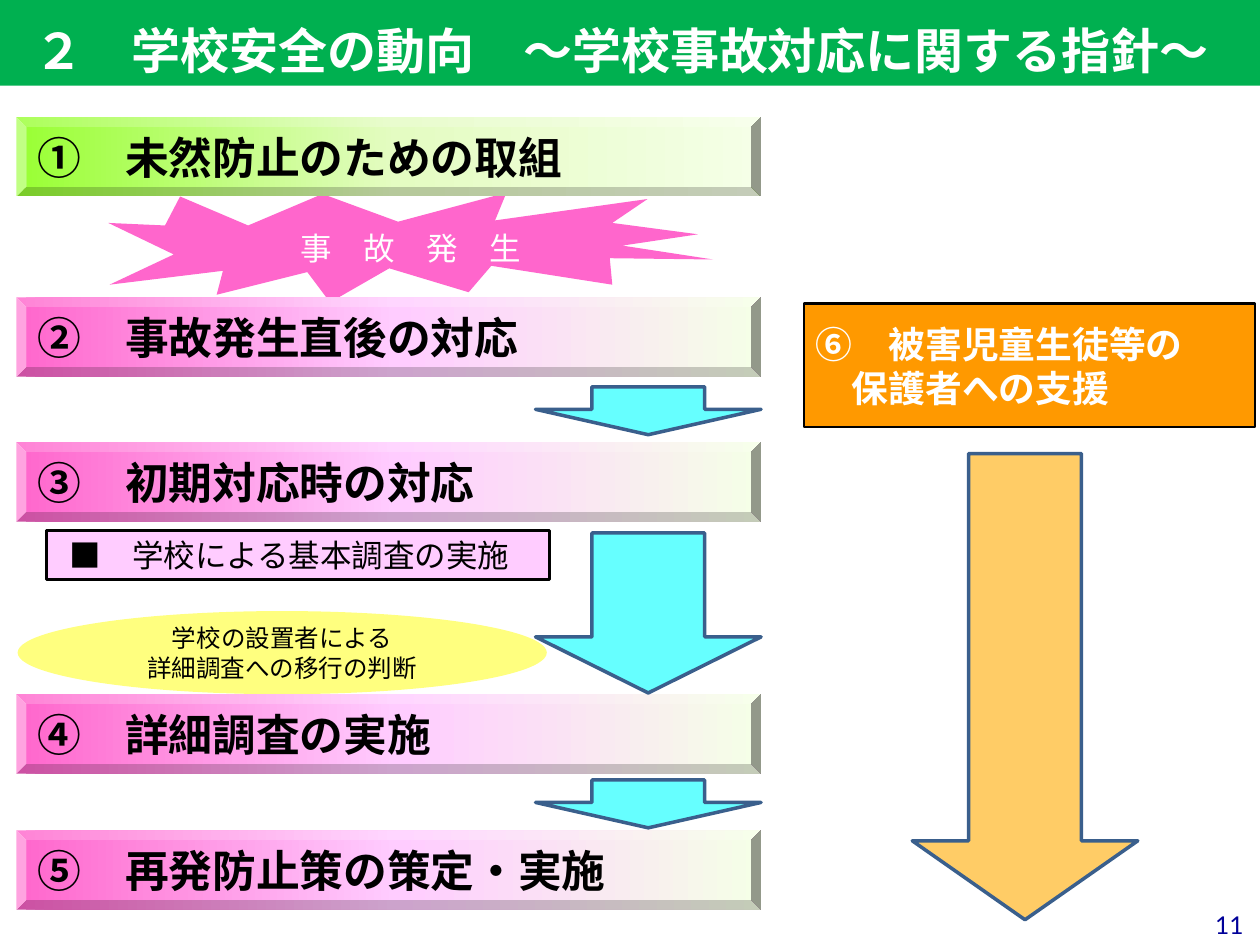
from copy import deepcopy
from lxml.etree import SubElement
from pptx import Presentation
from pptx.dml.color import RGBColor
from pptx.enum.shapes import MSO_SHAPE as SHAPE
from pptx.enum.text import MSO_ANCHOR as ANCHOR, PP_ALIGN as ALIGN
from pptx.oxml.ns import qn
from pptx.util import Inches, Pt

BLACK = RGBColor(0x00, 0x00, 0x00)
WHITE = RGBColor(0xFF, 0xFF, 0xFF)
GREEN = RGBColor(0x00, 0xB0, 0x50)
PINK = RGBColor(0xFF, 0x66, 0xCC)
PALE_PINK = RGBColor(0xFF, 0xCC, 0xFF)
LIME = RGBColor(0x99, 0xFF, 0x33)
PALE_LIME = RGBColor(0xE4, 0xFC, 0xC2)
CREAM = RGBColor(0xF5, 0xFF, 0xE7)
CYAN = RGBColor(0x66, 0xFF, 0xFF)
ORANGE = RGBColor(0xFF, 0x99, 0x00)
PALE_ORANGE = RGBColor(0xFF, 0xCC, 0x66)
YELLOW = RGBColor(0xFF, 0xFF, 0x00)
STEEL = RGBColor(0x3A, 0x5F, 0x8C)
NAVY = RGBColor(0x00, 0x00, 0x99)
CJK = "Noto Sans CJK JP"


def add_box(kind, x, y, w, h, fill=None, line=None, line_width=1.5):
    sp = s.shapes.add_shape(kind, Inches(x), Inches(y), Inches(w), Inches(h))
    sp.shadow.inherit = False
    if fill is not None:
        sp.fill.solid()
        sp.fill.fore_color.rgb = fill
    if line is None:
        sp.line.fill.background()
    else:
        sp.line.color.rgb = line
        sp.line.width = Pt(line_width)
    return sp


def write(sp, text, size, color, bold=False, align=ALIGN.LEFT, font=CJK, inset=0.04):
    """Fill the shape with one paragraph per line of text, centred vertically."""
    tf = sp.text_frame
    tf.word_wrap = True
    tf.vertical_anchor = ANCHOR.MIDDLE
    tf.margin_left = tf.margin_right = Inches(0.09)
    tf.margin_top = tf.margin_bottom = Inches(inset)
    tf.text = text
    for p in tf.paragraphs:
        p.alignment = align
        p.font.name = font
        p.font.size = Pt(size)
        p.font.bold = bold
        p.font.color.rgb = color
        props = p._p.get_or_add_pPr().get_or_add_defRPr()
        SubElement(props, qn("a:ea")).set("typeface", CJK)
    return tf


prs = Presentation()
prs.slide_width = Inches(10)
prs.slide_height = Inches(7.5)
s = prs.slides.add_slide(prs.slide_layouts[6])

# Accident burst
burst_points = [
    (3.16, 1.76), (4.02, 1.53), (3.93, 1.75), (5.14, 1.58), (4.86, 1.77),
    (5.54, 1.86), (4.94, 1.95), (5.66, 2.06), (4.84, 2.05), (4.86, 2.26),
    (3.9, 2.11), (3.72, 2.32), (3.09, 2.13), (2.62, 2.4), (2.44, 2.16),
    (1.72, 2.34), (1.77, 2.15), (0.87, 2.26), (1.38, 2.02), (0.86, 1.77),
    (1.31, 1.79), (1.43, 1.56), (1.97, 1.79), (2.56, 1.54),
]
points = [(Inches(x), Inches(y)) for x, y in burst_points]
builder = s.shapes.build_freeform(*points[0])
builder.add_line_segments(points[1:], close=True)
burst = builder.convert_to_shape()
burst.shadow.inherit = False
burst.fill.solid()
burst.fill.fore_color.rgb = PINK
burst.line.fill.background()
write(burst, "事　故　発　生", 18, WHITE, align=ALIGN.CENTER, inset=0.05)

# Decision to move on to the detailed survey
decision = add_box(SHAPE.OVAL, 0.14, 4.85, 4.2, 0.66, YELLOW)
yellow = decision.fill._xPr.find(qn("a:solidFill"))[0]
SubElement(yellow, qn("a:alpha")).set("val", "50000")
write(decision, "学校の設置者による\n詳細調査への移行の判断", 14, BLACK,
      align=ALIGN.CENTER, inset=0.05)

# Steps
steps = [
    (0.93, "①　未然防止のための取組", LIME, PALE_LIME),
    (2.36, "②　事故発生直後の対応", PINK, PALE_PINK),
    (3.51, "③　初期対応時の対応", PINK, PALE_PINK),
    (5.51, "④　詳細調査の実施", PINK, PALE_PINK),
    (6.59, "⑤　再発防止策の策定・実施", PINK, PALE_PINK),
]
for y, text, start, middle in steps:
    step = add_box(SHAPE.BEVEL, 0.13, y, 5.91, 0.63)
    step.fill.gradient()
    step.fill.gradient_angle = 0
    first = step.fill._xPr.find(qn("a:gradFill")).find(qn("a:gsLst"))[0]
    first.addnext(deepcopy(first))
    stops = zip(step.fill.gradient_stops, (0, 0.51, 1), (start, middle, CREAM))
    for stop, position, color in stops:
        stop.position = position
        stop.color.rgb = color
    write(step, text, 25, BLACK, bold=True)

# Basic survey
survey = add_box(SHAPE.RECTANGLE, 0.37, 4.21, 3.99, 0.39, PALE_PINK, BLACK)
tf = write(survey, "■　学校による基本調査の実施", 18, BLACK, font="Calibri")
tf.paragraphs[0]._p.get_or_add_pPr().set("marL", str(Inches(0.09)))

# Support for guardians
support = add_box(SHAPE.RECTANGLE, 6.38, 2.41, 3.58, 0.98, ORANGE, BLACK)
write(support, "⑥　被害児童生徒等の\n　保護者への支援", 21, WHITE, bold=True)

# Arrows
arrows = [
    (4.25, 3.07, 0.38, 0.53, CYAN),
    (4.25, 4.23, 1.27, 0.35, CYAN),
    (4.25, 6.19, 0.38, 0.53, CYAN),
    (7.24, 3.6, 3.7, 0.35, PALE_ORANGE),
]
for x, y, h, head, color in arrows:
    arrow = add_box(SHAPE.DOWN_ARROW, x, y, 1.79, h, color, STEEL, 2)
    arrow.adjustments[0] = 0.5
    arrow.adjustments[1] = head

# Page number
number = s.shapes.add_textbox(Inches(9.33), Inches(7.14), Inches(0.63), Inches(0.39))
write(number, "11", 14, NAVY, align=ALIGN.RIGHT, font="Lato", inset=0.05)

# Title
add_box(SHAPE.RECTANGLE, 0, -0.01, 10, 0.69, GREEN)
title = s.shapes.add_textbox(Inches(0.18), Inches(0.08), Inches(9.78), Inches(0.54))
write(title, "２　学校安全の動向　～学校事故対応に関する指針～", 28, WHITE, bold=True)
title.text_frame.paragraphs[0].line_spacing = Pt(40.3)

prs.save("out.pptx")
